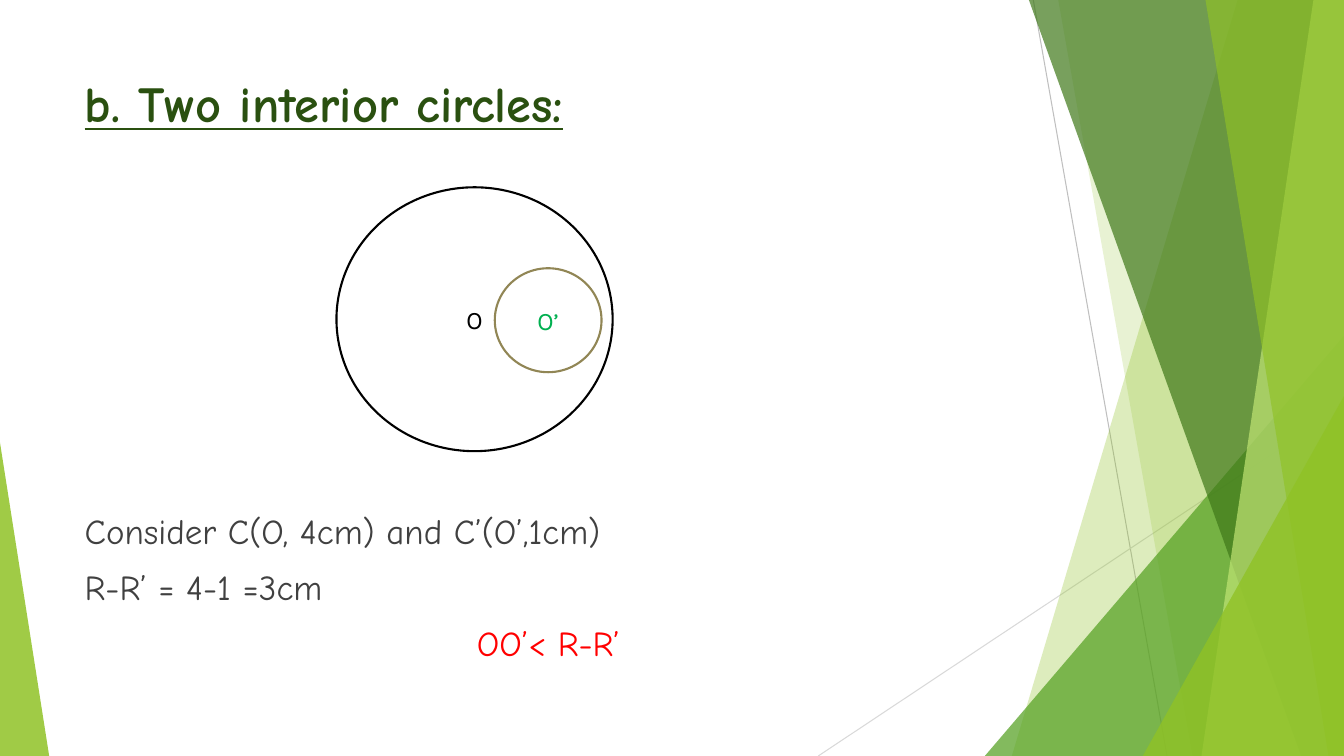
from dataclasses import dataclass

from lxml import etree
from pptx import Presentation
from pptx.dml.color import RGBColor
from pptx.enum.shapes import MSO_CONNECTOR, MSO_SHAPE
from pptx.enum.text import MSO_ANCHOR, MSO_AUTO_SIZE, PP_ALIGN
from pptx.oxml.ns import qn
from pptx.util import Cm, Pt

STRAIGHT = MSO_CONNECTOR.STRAIGHT
TRIANGLE = MSO_SHAPE.ISOSCELES_TRIANGLE
CIRCLE = MSO_SHAPE.FLOWCHART_CONNECTOR
TOP, MIDDLE, BOTTOM = MSO_ANCHOR.TOP, MSO_ANCHOR.MIDDLE, MSO_ANCHOR.BOTTOM
LEFT, CENTER = PP_ALIGN.LEFT, PP_ALIGN.CENTER
NO_AUTOFIT = MSO_AUTO_SIZE.NONE
TITLE_AND_CONTENT = 1


@dataclass(frozen=True)
class Theme:
    heading_font: str = "Comic Neue"
    label_font: str = "Karla"
    title_size: int = 36
    body_size: int = 25
    label_size: int = 18
    title: str = "2A5010"
    body: str = "404040"
    result: str = "FF0000"
    white: str = "FFFFFF"
    outer: str = "000000"
    inner: str = "918655"
    inner_label: str = "00B050"
    lime: str = "90C226"
    pale_lime: str = "C0E474"
    green: str = "54A021"
    dark_green: str = "3F7819"
    gray: str = "BFBFBF"
    light_gray: str = "D9D9D9"


@dataclass(frozen=True)
class Box:
    """A region of the slide, in centimetres."""
    left: float
    top: float
    width: float
    height: float

    def emu(self):
        return Cm(self.left), Cm(self.top), Cm(self.width), Cm(self.height)


THEME = Theme()
PAGE = Box(0, 0, 33.87, 19.05)


def rgb(color):
    return RGBColor.from_string(color)


def add_run(paragraph, text, font, size, color, bold=None, underline=None):
    run = paragraph.add_run()
    run.text = text
    run.font.name = font
    run.font.size = Pt(size)
    run.font.color.rgb = rgb(color)
    run.font.bold = bold
    run.font.underline = underline


def paint(shape, color, opacity):
    """Fill a borderless shape; opacity is a percentage."""
    shape.shadow.inherit = False
    shape.line.fill.background()
    shape.fill.solid()
    shape.fill.fore_color.rgb = rgb(color)
    tint = shape.fill._xPr.find(qn("a:solidFill"))[0]
    etree.SubElement(tint, qn("a:alpha")).set("val", str(opacity * 1000))


def add_hairline(slide, box, start, end, color):
    ends = [Cm(v) for x, y in (start, end) for v in (box.left + x, box.top + y)]
    hairline = slide.shapes.add_connector(STRAIGHT, *ends)
    hairline.line.color.rgb = rgb(color)
    hairline.line.width = Pt(0.75)
    etree.SubElement(hairline._element.spPr, qn("a:effectLst"))


def add_panel(slide, box, top_x, bottom_x, color, opacity):
    """Fill from a slanted left edge to the right edge of the box."""
    right, bottom = box.left + box.width, box.top + box.height
    corners = [(box.left + top_x, box.top), (right, box.top),
               (right, bottom), (box.left + bottom_x, bottom)]
    points = [(Cm(x), Cm(y)) for x, y in corners]
    outline = slide.shapes.build_freeform(*points[0])
    outline.add_line_segments(points[1:], close=True)
    paint(outline.convert_to_shape(), color, opacity)


def add_corner(slide, box, apex, color, opacity):
    corner = slide.shapes.add_shape(TRIANGLE, *box.emu())
    corner.adjustments[0] = apex
    paint(corner, color, opacity)


def add_right_corner(slide, box, left, top, color, opacity):
    corner = Box(box.left + left, box.top + top, box.width - left, box.height - top)
    add_corner(slide, corner, 1, color, opacity)


def add_backdrop(slide, box):
    add_hairline(slide, box, (26.04, 0), (29.41, box.height), THEME.gray)
    add_hairline(slide, box, (box.width, 10.24), (20.62, box.height), THEME.light_gray)
    add_panel(slide, box, 31.19, 25.5, THEME.lime, 30)
    add_panel(slide, box, 26.67, 30.05, THEME.lime, 20)
    add_right_corner(slide, box, 24.82, 8.46, THEME.green, 72)
    add_panel(slide, box, 25.93, 32.79, THEME.dark_green, 70)
    add_panel(slide, box, 33.1, 30.28, THEME.pale_lime, 70)
    add_panel(slide, box, 30.38, 33.48, THEME.lime, 65)
    add_right_corner(slide, box, 28.8, 9.98, THEME.lime, 80)
    left_corner = Box(box.left, box.top + 11.15, 1.24, box.height - 11.15)
    add_corner(slide, left_corner, 0, THEME.lime, 85)


def place(placeholder, box, anchor):
    placeholder.left, placeholder.top, placeholder.width, placeholder.height = box.emu()
    frame = placeholder.text_frame
    frame.word_wrap = True
    frame.auto_size = NO_AUTOFIT
    frame.vertical_anchor = anchor
    return frame


def fill_title(slide, box):
    heading = place(slide.shapes.title, box, TOP).paragraphs[0]
    heading.alignment = LEFT
    add_run(heading, "b. Two interior circles:", THEME.heading_font,
            THEME.title_size, THEME.title, bold=True, underline=True)


def fill_reasoning(slide, box):
    steps = (
        ("Consider C(O, 4cm) and C’(O’,1cm)", LEFT, THEME.body),
        ("R-R’ = 4-1 =3cm", LEFT, THEME.body),
        ("OO’< R-R’", CENTER, THEME.result),
    )
    frame = place(slide.placeholders[1], box, BOTTOM)
    frame.margin_bottom = Cm(0.05)
    for index, (text, alignment, color) in enumerate(steps):
        step = frame.add_paragraph() if index else frame.paragraphs[0]
        step.alignment = alignment
        step.space_before = Pt(10)
        properties = step._p.get_or_add_pPr()
        properties.set("marL", "0")
        properties.set("indent", "0")
        etree.SubElement(properties, qn("a:buNone"))
        add_run(step, text, THEME.heading_font, THEME.body_size, color)


def add_circle(slide, box, center, outline, label_color):
    circle = slide.shapes.add_shape(CIRCLE, *box.emu())
    circle.shadow.inherit = False
    circle.fill.solid()
    circle.fill.fore_color.rgb = rgb(THEME.white)
    circle.line.color.rgb = rgb(outline)
    circle.line.width = Pt(1.5)
    circle.text_frame.vertical_anchor = MIDDLE
    label = circle.text_frame.paragraphs[0]
    label.alignment = CENTER
    add_run(label, center, THEME.label_font, THEME.label_size, label_color)


def add_circles(slide, box):
    inner = Box(box.left + 3.99, box.top + 2.04, 2.69, 2.62)
    add_circle(slide, box, "O", THEME.outer, THEME.outer)
    add_circle(slide, inner, "O’", THEME.inner, THEME.inner_label)


def main():
    deck = Presentation()
    deck.slide_width, deck.slide_height = Cm(PAGE.width), Cm(PAGE.height)
    slide = deck.slides.add_slide(deck.slide_layouts[TITLE_AND_CONTENT])
    add_backdrop(slide, PAGE)
    fill_title(slide, Box(1.88, 1.7, 23.88, 3.66))
    fill_reasoning(slide, Box(1.88, 5.99, 23.88, 10.77))
    add_circles(slide, Box(8.48, 4.72, 6.96, 6.65))
    deck.save("out.pptx")


if __name__ == "__main__":
    main()
